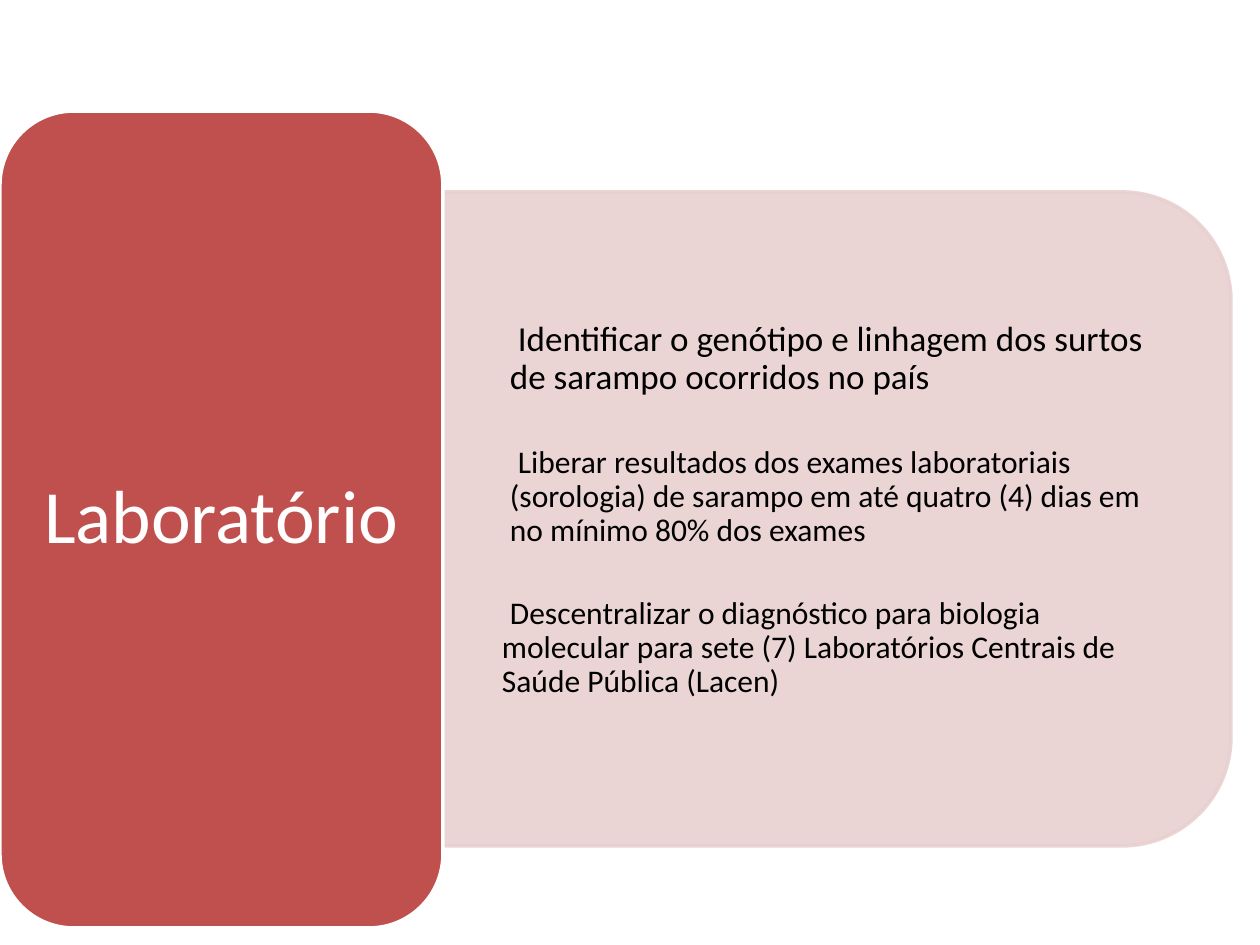
"""Build the laboratory goals slide: a red title block beside a pale panel of goals."""
import pptx
import pptx.util
import pptx.dml.color
import pptx.enum.shapes
import pptx.enum.text
import pptx.oxml.ns
import lxml.etree

PX = 914400 // 126
HUES = {"red": "C0504D", "pink": "E8D0D0", "white": "FFFFFF", "black": "000000"}
GOALS = [
    ("Identificar o genótipo e linhagem dos surtos de sarampo ocorridos no país", 20, 32),
    ("Liberar resultados dos exames laboratoriais (sorologia) de sarampo em até "
     "quatro (4) dias em no mínimo 80% dos exames", 18, 32),
    ("Descentralizar o diagnóstico para biologia molecular para sete (7) "
     "Laboratórios Centrais de Saúde Pública (Lacen)", 18, 24),
]
KINDS = pptx.enum.shapes.MSO_SHAPE
qn = pptx.oxml.ns.qn


def hue(name):
    return pptx.dml.color.RGBColor.from_string(HUES[name])


def place(item, box, pads):
    item.left, item.top, item.width, item.height = [n * PX for n in box]
    frame = item.text_frame
    frame.word_wrap = True
    frame.auto_size = pptx.enum.text.MSO_AUTO_SIZE.NONE
    frame.vertical_anchor = pptx.enum.text.MSO_ANCHOR.MIDDLE
    (frame.margin_left, frame.margin_top,
     frame.margin_right, frame.margin_bottom) = [n * PX for n in pads]
    return frame


deck = pptx.Presentation()
deck.slide_width = 1260 * PX
deck.slide_height = 945 * PX
slide = deck.slides.add_slide(deck.slide_layouts[1])
title = slide.shapes.title
body = slide.placeholders[1]

plates = []
for kind, box, fill, edge in [
    (KINDS.ROUND_2_SAME_RECTANGLE, (510, 125, 654, 788), "pink", "pink"),
    (KINDS.ROUNDED_RECTANGLE, (0, 111, 443, 817), "red", "white"),
]:
    plate = slide.shapes.add_shape(kind, *[n * PX for n in box])
    plate.shadow.inherit = False
    plate.fill.solid()
    plate.fill.fore_color.rgb = hue(fill)
    plate.line.color.rgb = hue(edge)
    plate.line.width = pptx.util.Pt(2)
    plates.append(plate)

panel, block = plates
panel.rotation = 90
for tint in panel._element.spPr.iter(qn("a:srgbClr")):
    lxml.etree.SubElement(tint, qn("a:alpha"), val="90000")

frame = place(title, (21, 132, 400, 775), (22, 11, 22, 11))
frame.text = "Laboratório"
para = frame.paragraphs[0]
para.alignment = pptx.enum.text.PP_ALIGN.CENTER
para.line_spacing = 0.9
para.font.name = "Calibri"
para.font.size = pptx.util.Pt(43)
para.font.color.rgb = hue("white")

frame = place(body, (444, 224, 756, 591), (34, 18, 34, 36))
frame.text = "\n".join(goal[0] for goal in GOALS)
for row, (para, (text, size, inset)) in enumerate(zip(frame.paragraphs, GOALS)):
    props = para._p.get_or_add_pPr()
    props.set("marL", str(inset * PX))
    props.set("indent", str(8 * PX))
    lxml.etree.SubElement(props, qn("a:buNone"))
    para.line_spacing = 0.9
    para.space_before = pptx.util.Pt(28 if row else 0)
    para.font.name = "Calibri"
    para.font.size = pptx.util.Pt(size)
    para.font.color.rgb = hue("black")

tree = slide.shapes._spTree
for item in (panel, body, block, title):
    tree.append(item._element)

deck.save("out.pptx")
